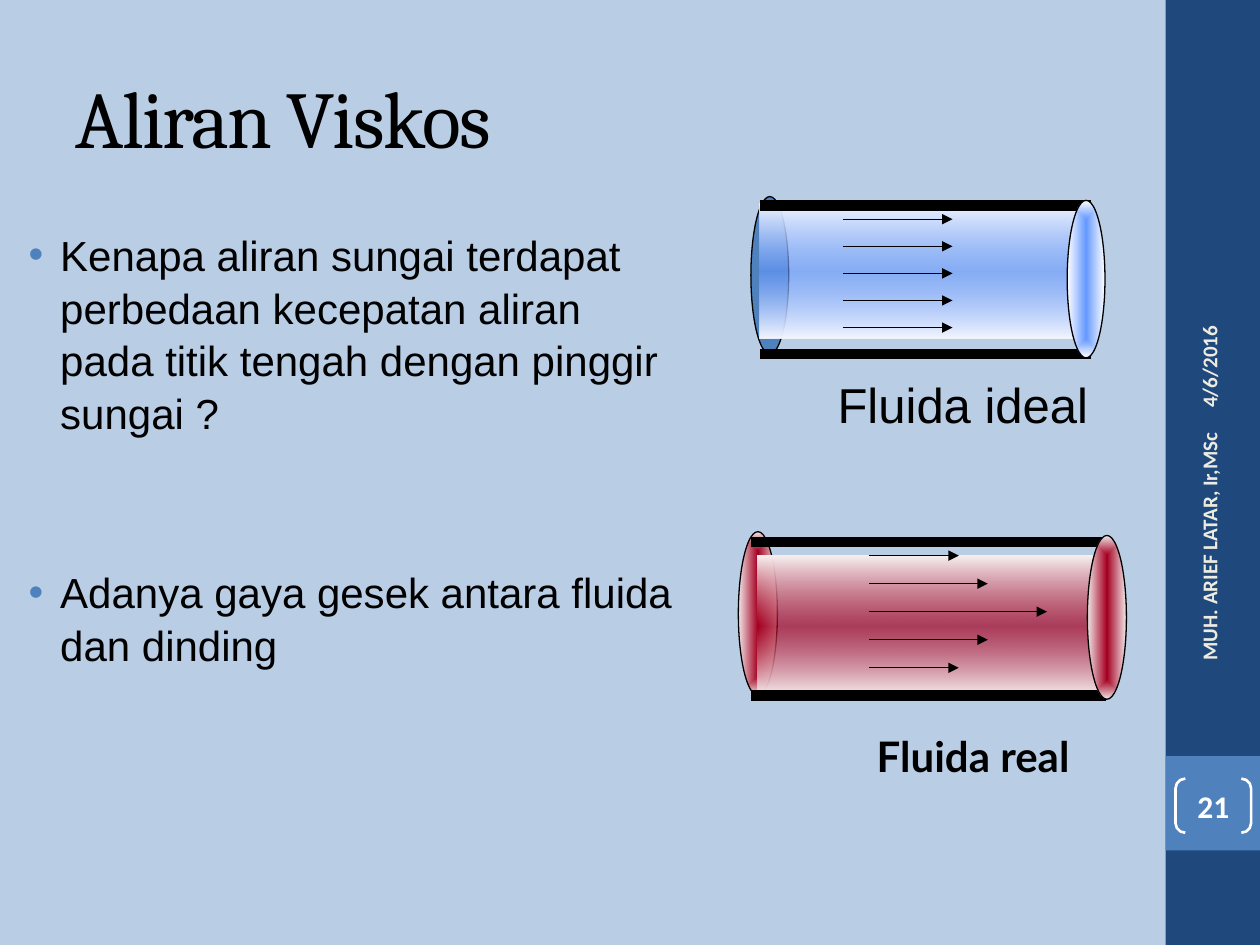
import pptx
import pptx.dml.color
import pptx.enum.shapes
import pptx.enum.text
import pptx.oxml
import pptx.oxml.ns
import pptx.util

Inches = pptx.util.Inches
Pt = pptx.util.Pt
RGB = pptx.dml.color.RGBColor.from_string
SHAPE = pptx.enum.shapes.MSO_SHAPE
STRAIGHT = pptx.enum.shapes.MSO_CONNECTOR.STRAIGHT
ALIGN = pptx.enum.text.PP_ALIGN
ANCHOR = pptx.enum.text.MSO_ANCHOR
qn = pptx.oxml.ns.qn
NS = pptx.oxml.ns.nsdecls("a")

COLORS = {
    "background": "B9CDE5", "sidebar": "1F497D", "accent": "4F81BD",
    "black": "000000", "white": "FFFFFF", "cream": "EEECE1",
    "blue": "6699FF", "blue_edge": "F5F7FF",
    "red": "A50021", "red_edge": "F8F3F3", "red_rim": "F0E7E8",
}


def write_text(frame, text, size=24, font="Arial", color="black", bold=False,
               align=ALIGN.LEFT, anchor=ANCHOR.MIDDLE, bullet=False,
               spacing=None, gap=0, tracking=None):
    """Fill a text frame, one paragraph for each line of text."""
    frame.word_wrap = True
    frame.auto_size = pptx.enum.text.MSO_AUTO_SIZE.NONE
    frame.vertical_anchor = anchor
    for index, line in enumerate(text.split("\n")):
        paragraph = frame.add_paragraph() if index else frame.paragraphs[0]
        paragraph.alignment = align
        paragraph.line_spacing = spacing
        paragraph.space_before = Pt(gap if index else 0)
        if bullet:
            properties = paragraph._p.get_or_add_pPr()
            properties.set("marL", str(Inches(0.38)))
            properties.set("indent", str(Inches(-0.25)))
            properties.append(pptx.oxml.parse_xml(
                f'<a:buClr {NS}><a:srgbClr val="{COLORS["accent"]}"/></a:buClr>'))
            properties.append(pptx.oxml.parse_xml(f'<a:buFont {NS} typeface="Arial"/>'))
            properties.append(pptx.oxml.parse_xml(f'<a:buChar {NS} char="•"/>'))
        run = paragraph.add_run()
        run.text = line
        run.font.size = Pt(size)
        run.font.name = font
        run.font.bold = bold
        run.font.color.rgb = RGB(COLORS[color])
        if tracking is not None:
            run._r.get_or_add_rPr().set("spc", str(tracking * 100))


def draw_shape(shapes, kind, box, fill=None, stops=None, direction="", line=None, width=0.75):
    """Draw a preset shape; stops are (position, color, opacity) in percent."""
    shape = shapes.add_shape(kind, *map(Inches, box))
    shape.shadow.inherit = False
    if stops:
        shape.fill.gradient()
        stop_xml = "".join(
            f'<a:gs pos="{position * 1000}"><a:srgbClr val="{COLORS[color]}">'
            f'<a:alpha val="{opacity * 1000}"/></a:srgbClr></a:gs>'
            for position, color, opacity in stops)
        properties = shape._element.spPr
        properties.replace(properties.find(qn("a:gradFill")), pptx.oxml.parse_xml(
            f'<a:gradFill {NS} rotWithShape="1"><a:gsLst>{stop_xml}</a:gsLst>{direction}</a:gradFill>'))
    elif fill:
        shape.fill.solid()
        shape.fill.fore_color.rgb = RGB(COLORS[fill])
    else:
        shape.fill.background()
    if line:
        shape.line.color.rgb = RGB(COLORS[line])
        shape.line.width = Pt(width)
    else:
        shape.line.fill.background()
    return shape


presentation = pptx.Presentation()
presentation.slide_width = Inches(10)
presentation.slide_height = Inches(7.5)
slide = presentation.slides.add_slide(presentation.slide_layouts[5])
slide.background.fill.solid()
slide.background.fill.fore_color.rgb = RGB(COLORS["background"])

# Sidebar with date, author and page number
draw_shape(slide.shapes, SHAPE.RECTANGLE, (9.25, 0, 0.75, 7.5), fill="sidebar")
draw_shape(slide.shapes, SHAPE.RECTANGLE, (9.25, 6, 0.75, 0.75), fill="accent")
for text, box, align in [
    ("4/6/2016", (8.26, 1.8, 2.67, 0.4), ALIGN.LEFT),
    ("MUH. ARIEF LATAR, Ir,MSc", (8.3, 4.43, 2.59, 0.4), ALIGN.RIGHT),
]:
    side_note = slide.shapes.add_textbox(*map(Inches, box))
    side_note.rotation = 270
    write_text(side_note.text_frame, text, size=12, font="Calibri", color="cream",
               bold=True, align=align)
page_number = draw_shape(slide.shapes, SHAPE.DOUBLE_BRACKET, (9.33, 6.18, 0.6, 0.43),
                         line="white", width=1.5)
page_number.adjustments[0] = 0.18
number_frame = page_number.text_frame
number_frame.margin_left = number_frame.margin_right = 0
number_frame.margin_top = number_frame.margin_bottom = 0
write_text(number_frame, "21", size=18, font="Calibri", color="white", bold=True,
           align=ALIGN.CENTER)

# Title and questions
title = slide.shapes.title
title.left, title.top, title.width, title.height = map(Inches, (0.5, 0.3, 8.33, 1.25))
write_text(title.text_frame, "Aliran Viskos", size=46, font="Cambria", tracking=-1)
questions = slide.shapes.add_textbox(*map(Inches, (0, 1.75, 5.5, 3.42)))
write_text(
    questions.text_frame,
    "Kenapa aliran sungai terdapat perbedaan kecepatan aliran pada titik tengah "
    "dengan pinggir sungai ?\nAdanya gaya gesek antara fluida dan dinding",
    anchor=ANCHOR.TOP, bullet=True, spacing=1.05, gap=72)

# Pipes: the ideal fluid has a uniform velocity, the real one is slowed by the wall
VERTICAL = '<a:lin ang="5400000" scaled="1"/>'
FROM_CENTER = '<a:path path="shape"><a:fillToRect l="50000" t="50000" r="50000" b="50000"/></a:path>'
red_end = [(0, "red", 100), (100, "red_rim", 100)]
pipes = [
    dict(back=(5.96, 1.56, 0.3, 1.25), back_stops=None,
         fluid=(6.03, 1.62, 2.63, 1.07),
         fluid_stops=[(0, "blue_edge", 100), (50, "blue", 60), (100, "blue_edge", 100)],
         front=(8.47, 1.59, 0.3, 1.25),
         front_stops=[(0, "blue", 100), (100, "white", 100)],
         wall=(6.03, 8.66), wall_tops=(1.63, 2.81),
         start=6.69, first=1.74, step=0.215, speeds=[0.87] * 5),
    dict(back=(5.86, 4.22, 0.31, 1.3), back_stops=red_end,
         fluid=(6.01, 4.41, 2.72, 1.12),
         fluid_stops=[(0, "red_edge", 100), (50, "red", 70), (100, "red_edge", 100)],
         front=(8.63, 4.25, 0.31, 1.3), front_stops=red_end,
         wall=(5.96, 8.78), wall_tops=(4.3, 5.52),
         start=6.9, first=4.41, step=0.2225, speeds=[0.71, 0.94, 1.41, 0.94, 0.71]),
]
for pipe in pipes:
    parts = slide.shapes.add_group_shape().shapes
    draw_shape(parts, SHAPE.OVAL, pipe["back"], fill="accent", stops=pipe["back_stops"],
               direction=FROM_CENTER, line="black")
    draw_shape(parts, SHAPE.RECTANGLE, pipe["fluid"], stops=pipe["fluid_stops"],
               direction=VERTICAL)
    walls = [(*pipe["wall"], y, 6) for y in pipe["wall_tops"]]
    arrows = [(pipe["start"], pipe["start"] + speed, pipe["first"] + row * pipe["step"], 0.75)
              for row, speed in enumerate(pipe["speeds"])]
    for left, right, y, width in walls + arrows:
        stroke = parts.add_connector(STRAIGHT, Inches(left), Inches(y), Inches(right), Inches(y))
        stroke.line.color.rgb = RGB(COLORS["black"])
        stroke.line.width = Pt(width)
        if width < 1:
            stroke.line._get_or_add_ln().append(
                pptx.oxml.parse_xml(f'<a:tailEnd {NS} type="triangle"/>'))
        stroke._element.spPr.append(pptx.oxml.parse_xml(f"<a:effectLst {NS}/>"))
    draw_shape(parts, SHAPE.OVAL, pipe["front"], stops=pipe["front_stops"],
               direction=FROM_CENTER, line="black")

ideal_label = slide.shapes.add_textbox(*map(Inches, (6.55, 2.92, 3.2, 0.57)))
write_text(ideal_label.text_frame, "Fluida ideal", size=28)
real_label = slide.shapes.add_textbox(*map(Inches, (6.86, 5.75, 1.95, 0.5)))
write_text(real_label.text_frame, "Fluida real", font="Lato", bold=True, anchor=ANCHOR.TOP)

presentation.save("out.pptx")
